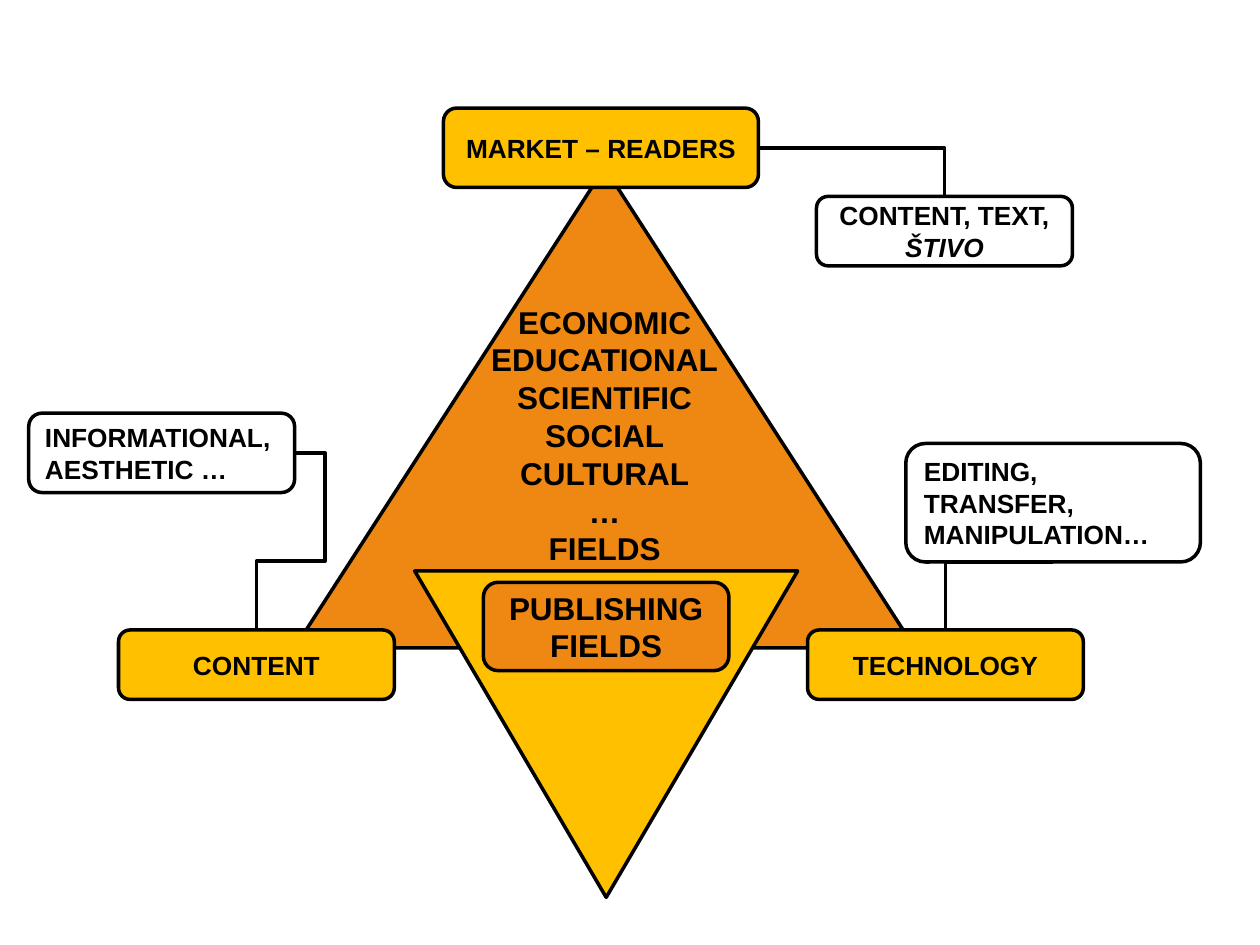
from lxml import etree
from pptx import Presentation
from pptx.dml.color import RGBColor
from pptx.enum.shapes import MSO_CONNECTOR, MSO_SHAPE
from pptx.enum.text import MSO_ANCHOR, PP_ALIGN
from pptx.oxml.ns import qn
from pptx.util import Cm, Pt

ORANGE = RGBColor(0xEF, 0x88, 0x12)
YELLOW = RGBColor(0xFF, 0xC0, 0x00)
WHITE = RGBColor(0xFF, 0xFF, 0xFF)
BLACK = RGBColor(0, 0, 0)
TRIANGLE, ROUNDED = MSO_SHAPE.ISOSCELES_TRIANGLE, MSO_SHAPE.ROUNDED_RECTANGLE
ELBOW = MSO_CONNECTOR.ELBOW
LEFT, CENTER = PP_ALIGN.LEFT, PP_ALIGN.CENTER
MIDDLE = MSO_ANCHOR.MIDDLE
FONT = "Arial"
LINE = Pt(2)


def add_outlined(s, kind, box, fill):
    sp = s.shapes.add_shape(kind, *[Cm(v) for v in box])
    sp.shadow.inherit = False
    sp.fill.solid()
    sp.fill.fore_color.rgb = fill
    sp.line.color.rgb = BLACK
    sp.line.width = LINE
    return sp


def write(sp, lines, size, align=CENTER):
    """Fill a shape with paragraphs, each a list of (text, italic) runs."""
    tf = sp.text_frame
    tf.word_wrap = True
    tf.vertical_anchor = MIDDLE
    for i, runs in enumerate(lines):
        p = tf.add_paragraph() if i else tf.paragraphs[0]
        p.alignment = align
        p.font.name, p.font.size, p.font.bold = FONT, Pt(size), True
        p.font.color.rgb = BLACK
        for text, italic in runs:
            r = p.add_run()
            r.text = text
            if italic:
                r.font.italic = True


def add_elbow(s, start, end, preset, upward=False, adjust=()):
    """Bent line; an upward one leaves its start vertically, to the right."""
    (x1, y1), (x2, y2) = start, end
    w, h = x2 - x1, abs(y2 - y1)
    left, top = x1, min(y1, y2)
    if upward:  # the unrotated frame swaps its sides around the same centre
        left, top = left + (w - h) / 2, top + (h - w) / 2
        w, h = h, w
    c = s.shapes.add_connector(ELBOW, Cm(left), Cm(top), Cm(left + w), Cm(top + h))
    c.line.color.rgb = BLACK
    c.line.width = LINE
    pr = c.element.spPr
    if upward:
        xfrm = pr.find(qn("a:xfrm"))
        for name, value in (("rot", "5400000"), ("flipH", "1"), ("flipV", "1")):
            xfrm.set(name, value)
    geom = pr.find(qn("a:prstGeom"))
    geom.set("prst", preset)
    for i, value in enumerate(adjust, 1):
        etree.SubElement(geom.find(qn("a:avLst")), qn("a:gd"),
                         name=f"adj{i}", fmla=f"val {value}")
    etree.SubElement(pr, qn("a:effectLst"))


def side(box, fx, fy):
    """Point at the given fractions of a box."""
    x, y, w, h = box
    return x + w * fx, y + h * fy


def add_outer_triangle(s, box):
    sp = add_outlined(s, TRIANGLE, box, ORANGE)
    names = ["ECONOMIC", "EDUCATIONAL", "SCIENTIFIC", "SOCIAL", "CULTURAL", "…", "FIELDS"]
    write(sp, [[(name, False)] for name in names], 18)
    sp.text_frame.margin_bottom = Cm(box[3] * 0.4)  # lifts the list


def add_inner_triangle(s, box):
    x, y, w, h = box
    add_outlined(s, TRIANGLE, box, YELLOW).rotation = 180
    label_w = 4.95
    label = add_outlined(s, ROUNDED, (x + (w - label_w) / 2, y + 0.23, label_w, 1.78), ORANGE)
    write(label, [[("PUBLISHING FIELDS", False)]], 18)


def add_corner(s, box, name, note_box, note_runs, note_align=LEFT):
    """Corner label and the note that explains it."""
    write(add_outlined(s, ROUNDED, box, YELLOW), [[(name, False)]], 15)
    write(add_outlined(s, ROUNDED, note_box, WHITE), [note_runs], 15, note_align)


def main():
    prs = Presentation()
    prs.slide_width, prs.slide_height = Cm(25.4), Cm(19.05)
    s = prs.slides.add_slide(prs.slide_layouts[6])

    add_outer_triangle(s, (5.94, 3.38, 12.5, 9.68))

    # Corners with their notes
    market, market_note = (8.94, 2.18, 6.35, 1.6), (16.46, 3.96, 5.16, 1.4)
    content, content_note = (2.39, 12.7, 5.56, 1.4), (0.58, 8.33, 5.36, 1.6)
    technology, technology_note = (16.28, 12.7, 5.56, 1.4), (18.26, 8.94, 5.94, 2.39)
    add_corner(s, market, "MARKET – READERS", market_note,
               [("CONTENT, TEXT, ", False), ("ŠTIVO", True)], CENTER)
    add_corner(s, content, "CONTENT", content_note,
               [("INFORMATIONAL, AESTHETIC …", False)])
    add_corner(s, technology, "TECHNOLOGY", technology_note,
               [("EDITING, TRANSFER, MANIPULATION…", False)])

    # Lines from each corner to its note
    add_elbow(s, side(market, 1, 0.5), side(market_note, 0.5, 0), "bentConnector2")
    add_elbow(s, side(content, 0.5, 0), side(content_note, 1, 0.5),
              "bentConnector4", True, (38900, 180000))
    add_elbow(s, side(technology, 0.5, 0), side(technology_note, 0.5, 1),
              "bentConnector2", True)

    add_inner_triangle(s, (8.36, 11.51, 7.72, 6.58))
    prs.save("out.pptx")


if __name__ == "__main__":
    main()
